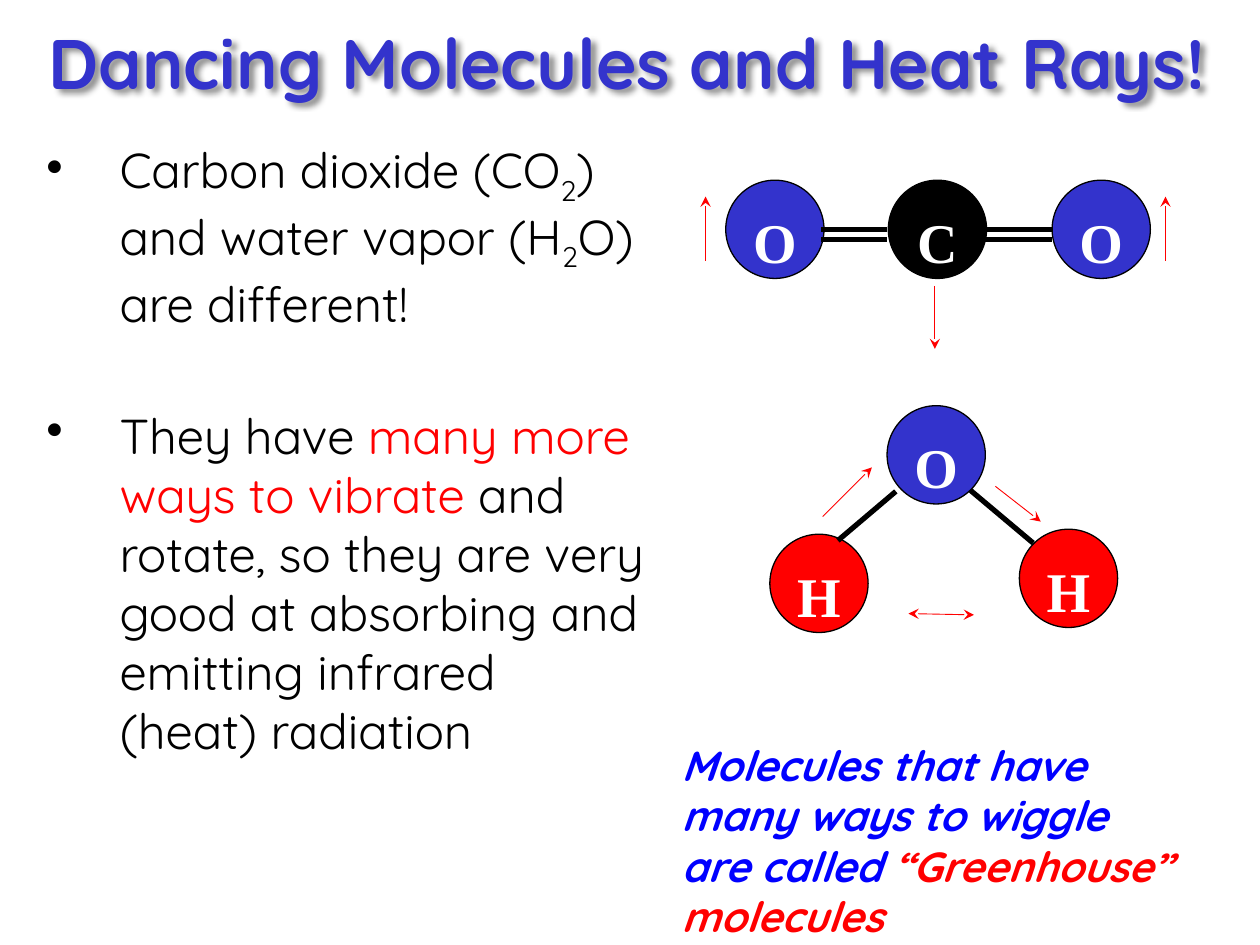
from lxml import etree
from pptx import Presentation
from pptx.dml.color import RGBColor
from pptx.enum import shapes, text
from pptx.oxml import parse_xml
from pptx.oxml.ns import nsdecls, qn
from pptx.util import Inches, Pt

SANS, SERIF = "Quicksand", "Times New Roman"
VIOLET, BLUE, RED, BLACK, WHITE = "3333CC", "0000FF", "FF0000", "000000", "FFFFFF"
ATOM_SIZE = 0.78


def color(value):
    return RGBColor.from_string(value)


def style(font, name, size, shade, bold=False, italic=False):
    font.name, font.size = name, Pt(size)
    font.bold, font.italic = bold, italic
    font.color.rgb = color(shade)


def add_spans(para, spans, size, bold=False, italic=False):
    """Each span is (words, colour) or (words, colour, baseline shift)."""
    for words, shade, *shift in spans:
        span = para.add_run()
        span.text = words
        style(span.font, SANS, size, shade, bold, italic)
        if shift:
            span._r.get_or_add_rPr().set("baseline", str(shift[0] * 1000))


def add_box(page, left, top, width, height):
    box = page.shapes.add_textbox(*map(Inches, (left, top, width, height)))
    box.text_frame.word_wrap = True
    return box


def add_bullet(para):
    props = para._p.get_or_add_pPr()
    props.set("marL", str(Inches(0.58)))
    props.set("indent", str(Inches(-0.58)))
    etree.SubElement(props, qn("a:buChar")).set("char", "•")


def add_shadow(box):
    box._element.spPr.append(parse_xml(
        f'<a:effectLst {nsdecls("a")}><a:outerShdw blurRad="38100" dist="38100" '
        'dir="2700000" algn="tl"><a:srgbClr val="000000"><a:alpha val="43000"/>'
        '</a:srgbClr></a:outerShdw></a:effectLst>'))


def add_atom(page, symbol, left, top, fill):
    atom = page.shapes.add_shape(
        shapes.MSO_SHAPE.OVAL, *map(Inches, (left, top, ATOM_SIZE, ATOM_SIZE)))
    atom.shadow.inherit = False
    atom.fill.solid()
    atom.fill.fore_color.rgb = color(fill)
    atom.line.color.rgb = color(BLACK)
    atom.line.width = Pt(0.75)
    frame = atom.text_frame
    frame.word_wrap = False
    frame.vertical_anchor = text.MSO_ANCHOR.TOP
    frame.margin_top, frame.margin_bottom = Inches(0.1), 0
    frame.text = symbol
    para = frame.paragraphs[0]
    para.alignment = text.PP_ALIGN.CENTER
    style(para.runs[0].font, SERIF, 32, WHITE, bold=True)


def add_line(page, start, end, shade, width, arrows=()):
    line = page.shapes.add_connector(
        shapes.MSO_CONNECTOR.STRAIGHT, *map(Inches, (*start, *end)))
    line.line.color.rgb = color(shade)
    line.line.width = Pt(width)
    for tag in arrows:
        etree.SubElement(line.line._get_or_add_ln(), qn(tag)).set("type", "stealth")
    etree.SubElement(line._element.spPr, qn("a:effectLst"))


def add_bond(page, start, end):
    add_line(page, start, end, BLACK, 3)


def add_motion(page, start, end, both_ways=False):
    arrows = ("a:headEnd", "a:tailEnd") if both_ways else ("a:tailEnd",)
    add_line(page, start, end, RED, 0.5, arrows)


def add_texts(page):
    # Title
    title = add_box(page, 0.14, 0.17, 9.67, 0.63)
    title.text_frame.vertical_anchor = text.MSO_ANCHOR.MIDDLE
    para = title.text_frame.paragraphs[0]
    para.alignment = text.PP_ALIGN.CENTER
    add_spans(para, [("Dancing Molecules and Heat Rays!", VIOLET)], 40, bold=True)
    add_shadow(title)

    # Bulleted points
    points = [
        [("Carbon dioxide (CO", BLACK), ("2", BLACK, -25),
         (") and water vapor (H", BLACK), ("2", BLACK, -25),
         ("O) are different!", BLACK)],
        [("They have ", BLACK), ("many more ways to vibrate ", RED),
         ("and rotate, so they are very good at absorbing and emitting "
          "infrared (heat) radiation", BLACK)],
    ]
    frame = add_box(page, 0.27, 1.06, 4.95, 5.88).text_frame
    for index, spans in enumerate(points):
        para = frame.add_paragraph() if index else frame.paragraphs[0]
        if index:
            para.space_before = Pt(42)
        add_bullet(para)
        add_spans(para, spans, 28)

    # Conclusion
    frame = add_box(page, 5.31, 5.82, 4.17, 1.72).text_frame
    add_spans(frame.paragraphs[0],
              [("Molecules that have many ways to wiggle are called ", BLUE),
               ("“Greenhouse” molecules", RED)], 24, bold=True, italic=True)


def add_carbon_dioxide(page):
    for symbol, left, fill in (("O", 5.76, VIOLET), ("O", 8.35, VIOLET),
                               ("C", 7.05, BLACK)):
        add_atom(page, symbol, left, 1.43, fill)
    # Double bonds
    for left, right in ((6.52, 7.04), (7.82, 8.35)):
        for y in (1.82, 1.9):
            add_bond(page, (left, y), (right, y))
    # Oxygens move up while carbon moves down
    for x in (5.6, 9.25):
        add_motion(page, (x, 2.07), (x, 1.56))
    add_motion(page, (7.42, 2.27), (7.42, 2.77))


def add_water(page):
    for symbol, left, top, fill in (("H", 6.11, 4.24, RED), ("H", 8.09, 4.2, RED),
                                    ("O", 7.04, 3.22, VIOLET)):
        add_atom(page, symbol, left, top, fill)
    add_bond(page, (6.65, 4.29), (7.11, 3.9))
    add_bond(page, (7.7, 3.89), (8.2, 4.31))
    add_motion(page, (6.53, 4.1), (6.92, 3.71))
    add_motion(page, (7.9, 3.86), (8.26, 4.14))
    add_motion(page, (7.21, 4.87), (7.73, 4.88), both_ways=True)


def main():
    deck = Presentation()
    deck.slide_width, deck.slide_height = Inches(10), Inches(7.5)
    page = deck.slides.add_slide(deck.slide_layouts[6])
    add_texts(page)
    add_carbon_dioxide(page)
    add_water(page)
    deck.save("out.pptx")


if __name__ == "__main__":
    main()
